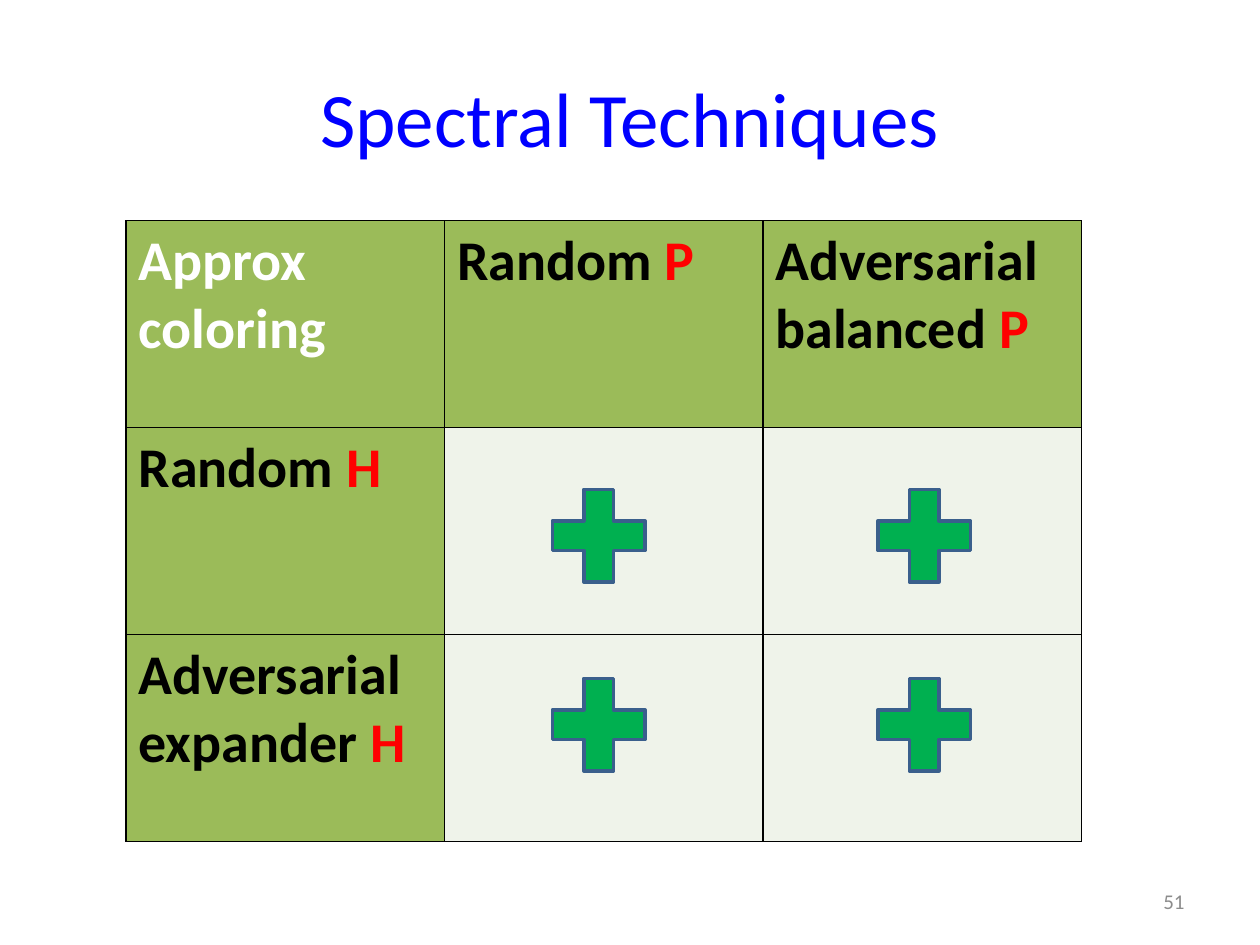
from lxml import etree
from pptx import Presentation, util as u
from pptx.dml.color import RGBColor
from pptx.enum import shapes, text
from pptx.oxml import ns

FONT = "Calibri"
BLACK, WHITE, RED, BLUE, GREY = "000000", "FFFFFF", "FF0000", "0000FF", "8C8C8C"
HEADER_GREEN, BODY_GREEN = "9BBB59", "EFF3EA"
PLUS_GREEN, PLUS_LINE = "00B050", "3A5F8C"

# Each cell is a list of (text, colour) runs.
CELLS = [
    [[("Approx coloring", WHITE)],
     [("Random ", BLACK), ("P", RED)],
     [("Adversarial balanced ", BLACK), ("P", RED)]],
    [[("Random ", BLACK), ("H", RED)], [], []],
    [[("Adversarial expander ", BLACK), ("H", RED)], [], []],
]


def color(value):
    return RGBColor.from_string(value)


def apply_format(target, values):
    for name, value in values.items():
        setattr(target, name, value)


def add_run(paragraph, content, run_color, size, bold=False):
    run = paragraph.add_run()
    run.text = content
    apply_format(run.font, {"name": FONT, "size": u.Pt(size), "bold": bold})
    run.font.color.rgb = color(run_color)


def fill_title(slide, content):
    title = slide.shapes.title
    apply_format(title, {"left": u.Cm(1.27), "top": u.Cm(0.76),
                         "width": u.Cm(22.86), "height": u.Cm(3.18)})
    title.text_frame.vertical_anchor = text.MSO_ANCHOR.MIDDLE
    paragraph = title.text_frame.paragraphs[0]
    paragraph.alignment = text.PP_ALIGN.CENTER
    add_run(paragraph, content, BLUE, 44)


def add_slide_number(slide, number):
    box = slide.shapes.add_textbox(u.Cm(18.2), u.Cm(17.65), u.Cm(5.93), u.Cm(1.02))
    apply_format(box.text_frame, {"word_wrap": True,
                                  "vertical_anchor": text.MSO_ANCHOR.MIDDLE})
    paragraph = box.text_frame.paragraphs[0]
    paragraph.alignment = text.PP_ALIGN.RIGHT
    add_run(paragraph, number, GREY, 12)


def set_borders(cell, line_color, width):
    """Draw all four sides; borders must precede the fill in the cell XML."""
    properties = cell._tc.get_or_add_tcPr()
    for index, side in enumerate(("lnL", "lnR", "lnT", "lnB")):
        line = etree.Element(ns.qn(f"a:{side}"), w=str(u.Pt(width)))
        solid = etree.SubElement(line, ns.qn("a:solidFill"))
        etree.SubElement(solid, ns.qn("a:srgbClr"), val=line_color)
        properties.insert(index, line)


def add_coloring_table(slide):
    column_width, row_height = u.Cm(6.42), u.Cm(4.17)
    row_count, column_count = len(CELLS), len(CELLS[0])
    table = slide.shapes.add_table(
        row_count, column_count, u.Cm(2.54), u.Cm(4.45),
        column_width * column_count, row_height * row_count).table
    for column in table.columns:
        column.width = column_width
    for row in table.rows:
        row.height = row_height
    for row, contents in enumerate(CELLS):
        for column, runs in enumerate(contents):
            cell = table.cell(row, column)
            is_header = row == 0 or column == 0
            cell.fill.solid()
            cell.fill.fore_color.rgb = color(HEADER_GREEN if is_header else BODY_GREEN)
            set_borders(cell, BLACK, 1)
            for content, run_color in runs:
                add_run(cell.text_frame.paragraphs[0], content, run_color, 32, bold=True)


def add_plus(slide, left, top):
    size = u.Cm(2.54)
    plus = slide.shapes.add_shape(shapes.MSO_SHAPE.MATH_PLUS, left, top, size, size)
    plus.shadow.inherit = False
    plus.fill.solid()
    plus.fill.fore_color.rgb = color(PLUS_GREEN)
    plus.line.color.rgb = color(PLUS_LINE)
    plus.line.width = u.Pt(2)


def main():
    presentation = Presentation()
    apply_format(presentation, {"slide_width": u.Cm(25.4), "slide_height": u.Cm(19.05)})
    title_only = presentation.slide_layouts[5]
    slide = presentation.slides.add_slide(title_only)
    fill_title(slide, "Spectral Techniques")
    add_slide_number(slide, "51")
    add_coloring_table(slide)
    for left in (10.8, 17.36):
        for top in (9.53, 13.34):
            add_plus(slide, u.Cm(left), u.Cm(top))
    presentation.save("out.pptx")


if __name__ == "__main__":
    main()
